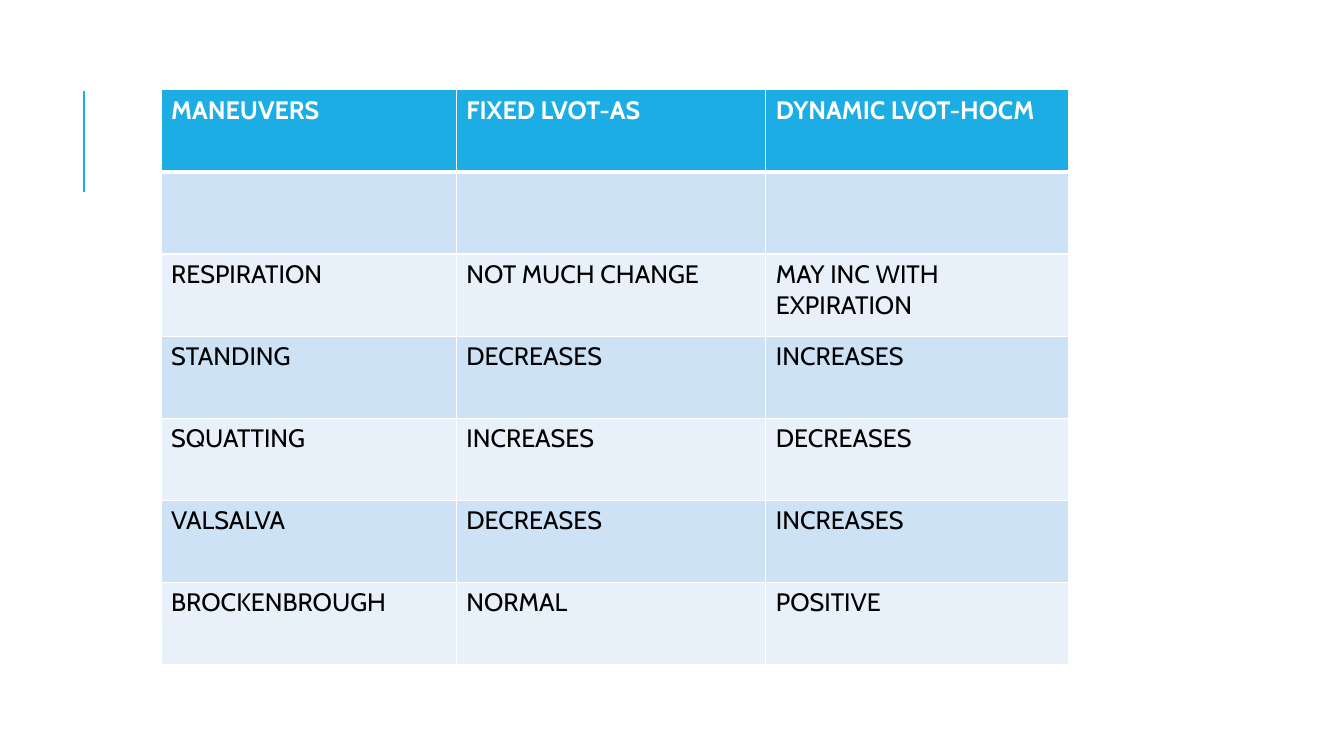
"""Build a slide comparing fixed and dynamic outflow obstruction by maneuver."""
from lxml.etree import SubElement
from pptx import Presentation
from pptx.dml.color import RGBColor
from pptx.enum.shapes import MSO_CONNECTOR as Link
from pptx.oxml.ns import qn
from pptx.util import Cm, Pt

ROWS = [
    ("MANEUVERS", "FIXED LVOT-AS", "DYNAMIC LVOT-HOCM"),
    ("", "", ""),
    ("RESPIRATION", "NOT MUCH CHANGE", "MAY INC WITH EXPIRATION"),
    ("STANDING", "DECREASES", "INCREASES"),
    ("SQUATTING", "INCREASES", "DECREASES"),
    ("VALSALVA", "DECREASES", "INCREASES"),
    ("BROCKENBROUGH", "NORMAL", "POSITIVE"),
]
WIDTHS = (7.44, 7.8, 7.62)
HIGH = 2.07
LEFT, TOP = 4.06, 2.26
FONT, SIZE = "Cabin", 18
BLUE, WHITE, BLACK = "1CADE4", "FFFFFF", "000000"
BANDS = ("E8F1FA", "CDE3F5")


def paint(color, code):
    color.rgb = RGBColor.from_string(code)


def edge(cell, side, width):
    line = SubElement(cell._tc.get_or_add_tcPr(), qn("a:ln" + side), w=str(Pt(width)))
    fill = SubElement(line, qn("a:solidFill"))
    SubElement(fill, qn("a:srgbClr"), val=WHITE)


def dress(cell, text, row):
    head = row == 0
    for side in "LRTB":
        thick = (row, side) in ((0, "B"), (1, "T"))
        edge(cell, side, 3 if thick else 1)
    cell.fill.solid()
    paint(cell.fill.fore_color, BLUE if head else BANDS[row % 2])
    cell.text_frame.text = text
    font = cell.text_frame.paragraphs[0].font
    for run in cell.text_frame.paragraphs[0].runs:
        font = run.font
    font.name, font.size, font.bold = FONT, Pt(SIZE), head
    paint(font.color, WHITE if head else BLACK)


def main():
    deck = Presentation()
    deck.slide_width, deck.slide_height = Cm(33.87), Cm(19.05)
    slide = deck.slides.add_slide(deck.slide_layouts[6])

    rule = slide.shapes.add_connector(Link.STRAIGHT, Cm(2.12), Cm(4.84), Cm(2.12), Cm(2.3))
    rule.line.width = Pt(1.5)
    paint(rule.line.color, BLUE)
    SubElement(rule._element.spPr, qn("a:effectLst"))

    table = slide.shapes.add_table(
        len(ROWS), len(WIDTHS), Cm(LEFT), Cm(TOP), Cm(sum(WIDTHS)), Cm(HIGH * len(ROWS))
    ).table
    for col, width in zip(table.columns, WIDTHS):
        col.width = Cm(width)
    for row, texts in enumerate(ROWS):
        table.rows[row].height = Cm(HIGH)
        for col, text in enumerate(texts):
            dress(table.cell(row, col), text, row)

    deck.save("out.pptx")


if __name__ == "__main__":
    main()
